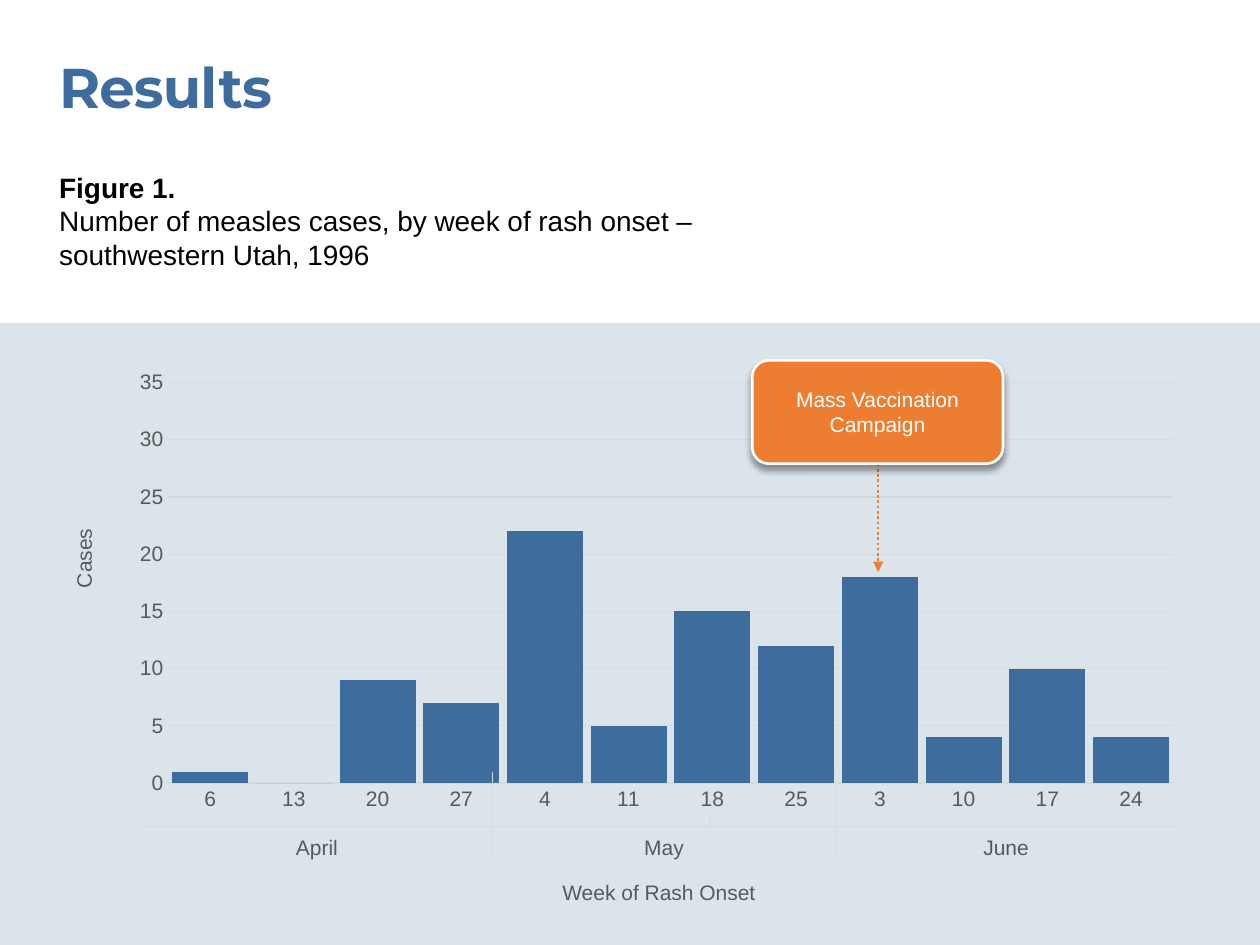
from lxml import etree
from pptx import Presentation
from pptx.chart.data import CategoryChartData
from pptx.dml.color import RGBColor
from pptx.enum import chart as ch, dml, shapes, text
from pptx.oxml import parse_xml
from pptx.oxml.ns import nsdecls, qn
from pptx.util import Pt

BLUE = RGBColor(0x3D, 0x6C, 0x9D)
PALE = RGBColor(0xDB, 0xE4, 0xEA)
ORANGE = RGBColor(0xED, 0x7D, 0x31)
GRAY = RGBColor(0x59, 0x59, 0x59)
RULE = RGBColor(0xD9, 0xD9, 0xD9)
BLACK = RGBColor(0, 0, 0)
WHITE = RGBColor(0xFF, 0xFF, 0xFF)

prs = Presentation()
prs.slide_width, prs.slide_height = Pt(720), Pt(540)
s = prs.slides.add_slide(prs.slide_layouts[6])


def add_text(x, y, w, h, lines, size, color, font="Arial", bold=False, align=None):
    sp = s.shapes.add_textbox(Pt(x), Pt(y), Pt(w), Pt(h))
    tf = sp.text_frame
    tf.word_wrap = True
    tf.margin_left = tf.margin_right = tf.margin_top = tf.margin_bottom = 0
    tf.text = lines
    for i, p in enumerate(tf.paragraphs):
        p.alignment = align
        f = p.runs[0].font
        f.name, f.size, f.bold = font, Pt(size), bold and i == 0
        f.color.rgb = color
    return tf


def add_line(x1, y1, x2, y2, color=RULE, width=0.75):
    cn = s.shapes.add_connector(shapes.MSO_CONNECTOR.STRAIGHT, Pt(x1), Pt(y1), Pt(x2), Pt(y2))
    cn.line.color.rgb = color
    cn.line.width = Pt(width)
    etree.SubElement(cn._element.spPr, qn("a:effectLst"))
    return cn


panel = s.shapes.add_shape(shapes.MSO_SHAPE.RECTANGLE, 0, Pt(184.5), Pt(720), Pt(355.5))
panel.shadow.inherit = False
panel.fill.solid()
panel.fill.fore_color.rgb = PALE
panel.line.fill.background()

title = add_text(33.84, 30.24, 540, 39, "Results", 32, BLUE, "Montserrat", True)
title.paragraphs[0].runs[0].font._element.set("spc", "-50")
add_text(33.84, 97.2, 450, 58,
         "Figure 1.\nNumber of measles cases, by week of rash onset – southwestern Utah, 1996",
         16, BLACK, bold=True)

data = CategoryChartData()
data.categories = ["6", "13", "20", "27", "4", "11", "18", "25", "3", "10", "17", "24"]
data.add_series("Series 1", [1, 0, 9, 7, 22, 5, 15, 12, 18, 4, 10, 4])
chart = s.shapes.add_chart(ch.XL_CHART_TYPE.COLUMN_CLUSTERED, Pt(33.84), Pt(207.36),
                           Pt(649.44), Pt(261.36), data).chart
chart.has_legend = chart.has_title = False
chart.font.name, chart.font.size = "Arial", Pt(12)
chart.font.color.rgb = GRAY
plot = chart.plots[0]
plot.gap_width = 10
plot.vary_by_categories = False
bars = plot.series[0].format.fill
bars.solid()
bars.fore_color.rgb = BLUE

cat, val = chart.category_axis, chart.value_axis
for axis in (cat, val):
    axis.major_tick_mark = axis.minor_tick_mark = ch.XL_TICK_MARK.NONE
cat.format.line.color.rgb = RULE
cat.format.line.width = Pt(0.75)
val.minimum_scale, val.maximum_scale, val.major_unit = 0, 35, 5
val.format.line.fill.background()
val.major_gridlines.format.line.color.rgb = RULE
val.major_gridlines.format.line.width = Pt(0.75)
val.axis_title.text_frame.text = "Cases"
f = val.axis_title.text_frame.paragraphs[0].runs[0].font
f.name, f.size, f.bold = "Arial", Pt(12), False
f.color.rgb = GRAY

area = chart._chartSpace.chart.plotArea
for old in area.findall(qn("c:layout")):
    area.remove(old)
area.insert(0, parse_xml(
    f'<c:layout {nsdecls("c")}><c:manualLayout><c:layoutTarget val="inner"/>'
    '<c:xMode val="edge"/><c:yMode val="edge"/><c:x val="0.096"/><c:y val="0.043"/>'
    '<c:w val="0.884"/><c:h val="0.876"/></c:manualLayout></c:layout>'))
head = val.axis_title._element
for old in head.findall(qn("c:layout")):
    head.remove(old)
head.find(qn("c:tx")).addnext(parse_xml(
    f'<c:layout {nsdecls("c")}><c:manualLayout><c:xMode val="edge"/><c:yMode val="edge"/>'
    '<c:x val="0.007"/><c:y val="0.354"/></c:manualLayout></c:layout>'))

edges = [80.64, 281.52, 477.36, 672.48]
for month, left, right in zip(["April", "May", "June"], edges, edges[1:]):
    add_text(left, 476.64, right - left, 14.4, month, 12, GRAY, align=text.PP_ALIGN.CENTER)
add_text(edges[0], 502.56, edges[-1] - edges[0], 14.4, "Week of Rash Onset", 12, GRAY,
         align=text.PP_ALIGN.CENTER)
add_line(edges[0], 472.32, edges[-1], 472.32)
for x in edges[1:3]:
    add_line(x, 487.44, x, 441.36)
add_line(405.36, 472.32, 405.36, 466.56)

arrow = add_line(501.84, 264.96, 501.84, 326.88, ORANGE, 1.5)
arrow.line.dash_style = dml.MSO_LINE.ROUND_DOT
etree.SubElement(arrow.line._get_or_add_ln(), qn("a:tailEnd"), type="triangle")

sp = s.shapes.add_shape(shapes.MSO_SHAPE.ROUNDED_RECTANGLE, Pt(429.84), Pt(205.92),
                        Pt(143.28), Pt(59.04))
sp.adjustments[0] = 0.16
sp.fill.solid()
sp.fill.fore_color.rgb = ORANGE
sp.line.color.rgb = WHITE
sp.line.width = Pt(1.5)
sp.shadow.inherit = False
sp._element.spPr.find(qn("a:effectLst")).append(parse_xml(
    f'<a:outerShdw {nsdecls("a")} blurRad="50800" dist="38100" dir="5400000" rotWithShape="0">'
    '<a:srgbClr val="000000"><a:alpha val="40000"/></a:srgbClr></a:outerShdw>'))
tf = sp.text_frame
tf.word_wrap = True
tf.vertical_anchor = text.MSO_ANCHOR.MIDDLE
tf.text = "Mass Vaccination Campaign"
p = tf.paragraphs[0]
p.alignment = text.PP_ALIGN.CENTER
r = p.runs[0]
r.font.name, r.font.size = "Arial", Pt(12)
r.font.color.rgb = WHITE

prs.save("out.pptx")
